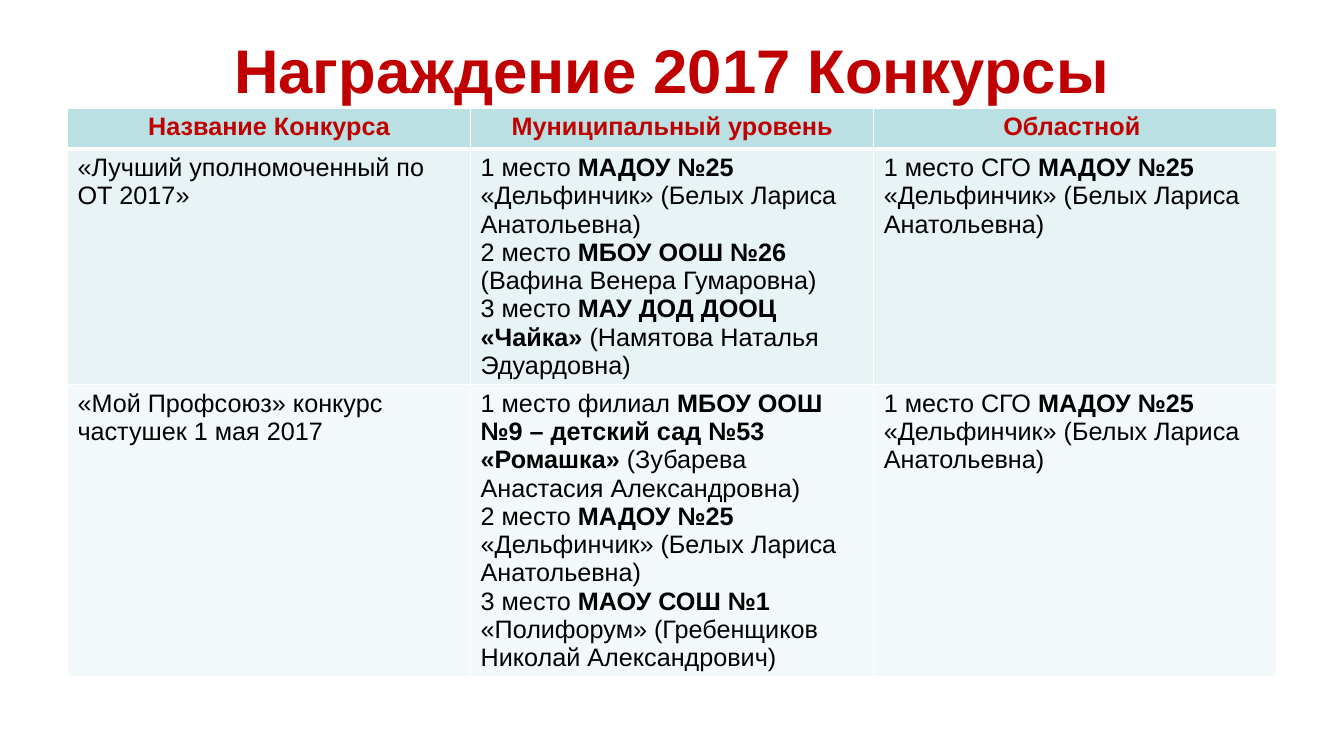
from lxml import etree
from pptx import Presentation
from pptx.dml.color import RGBColor
from pptx.enum.text import MSO_ANCHOR, MSO_AUTO_SIZE, PP_ALIGN
from pptx.oxml.ns import qn
from pptx.util import Cm, Pt

CENTER, LEFT = PP_ALIGN.CENTER, PP_ALIGN.LEFT
TOP, NO_FIT = MSO_ANCHOR.TOP, MSO_AUTO_SIZE.NONE

RED = RGBColor(0xC0, 0x00, 0x00)
BLACK = RGBColor(0x00, 0x00, 0x00)
WHITE = RGBColor(0xFF, 0xFF, 0xFF)
ROW_FILLS = [RGBColor(0xBB, 0xE0, 0xE3),
             RGBColor(0xE7, 0xF3, 0xF4),
             RGBColor(0xF3, 0xF9, 0xFA)]
FONT = "Arial"

# Cell text: one paragraph per line, bold parts between asterisks
DOLPHIN = "*МАДОУ №25 *«Дельфинчик» (Белых Лариса Анатольевна)"
REGIONAL = "1 место СГО " + DOLPHIN
ROWS = [
    ["*Название Конкурса*", "*Муниципальный уровень*", "*Областной *"],
    ["«Лучший уполномоченный по ОТ 2017»",
     "1 место " + DOLPHIN + "\n"
     "2 место *МБОУ ООШ №26 *(Вафина Венера Гумаровна)\n"
     "3 место *МАУ ДОД ДООЦ «Чайка»* (Намятова Наталья Эдуардовна)",
     REGIONAL],
    ["«Мой Профсоюз» конкурс частушек 1 мая 2017",
     "1 место филиал *МБОУ ООШ №9 – детский сад №53 «Ромашка»* "
     "(Зубарева Анастасия Александровна)\n"
     "2 место " + DOLPHIN + "\n"
     "3 место *МАОУ СОШ №1 *«Полифорум» (Гребенщиков Николай Александрович)",
     REGIONAL],
]
ROW_HEIGHTS = [1.03, 5.94, 7.35]


def style_run(r, size, color, bold):
    r.font.name = FONT
    r.font.size = Pt(size)
    r.font.color.rgb = color
    r.font.bold = bold


def add_borders(cell, widths):
    tc_pr = cell._tc.get_or_add_tcPr()
    for n, (side, width) in enumerate(widths.items()):
        line = etree.Element(qn("a:" + side), w=str(Pt(width)))
        fill = etree.SubElement(line, qn("a:solidFill"))
        etree.SubElement(fill, qn("a:srgbClr"), val=str(WHITE))
        tc_pr.insert(n, line)


prs = Presentation()
prs.slide_width, prs.slide_height = Cm(33.87), Cm(19.05)
s = prs.slides.add_slide(prs.slide_layouts[5])

# Title
title = s.shapes.title
title.left, title.top = Cm(1.7), Cm(0.76)
title.width, title.height = Cm(30.48), Cm(3.18)
tf = title.text_frame
tf.text = "Награждение 2017 Конкурсы"
tf.word_wrap = True
tf.auto_size = NO_FIT
tf.vertical_anchor = TOP
tf.margin_top = Cm(0.05)
p = tf.paragraphs[0]
p.alignment = CENTER
style_run(p.runs[0], 44, RED, True)

# Awards table
table = s.shapes.add_table(len(ROWS), len(ROWS[0]), Cm(1.7), Cm(2.72),
                           Cm(30.48), Cm(sum(ROW_HEIGHTS))).table
for i, row in enumerate(ROWS):
    table.rows[i].height = Cm(ROW_HEIGHTS[i])
    is_header = i == 0
    for j, text in enumerate(row):
        cell = table.cell(i, j)
        cell.fill.solid()
        cell.fill.fore_color.rgb = ROW_FILLS[i]
        # The line under the header is thicker than the others
        add_borders(cell, {"lnL": 1, "lnR": 1, "lnT": 3 if i == 1 else 1,
                           "lnB": 3 if is_header else 1})
        tf = cell.text_frame
        for n, line in enumerate(text.split("\n")):
            p = tf.add_paragraph() if n else tf.paragraphs[0]
            p.alignment = CENTER if is_header else LEFT
            for k, part in enumerate(line.split("*")):
                if part:
                    r = p.add_run()
                    r.text = part
                    style_run(r, 18, RED if is_header else BLACK, k % 2 == 1)

prs.save("out.pptx")
